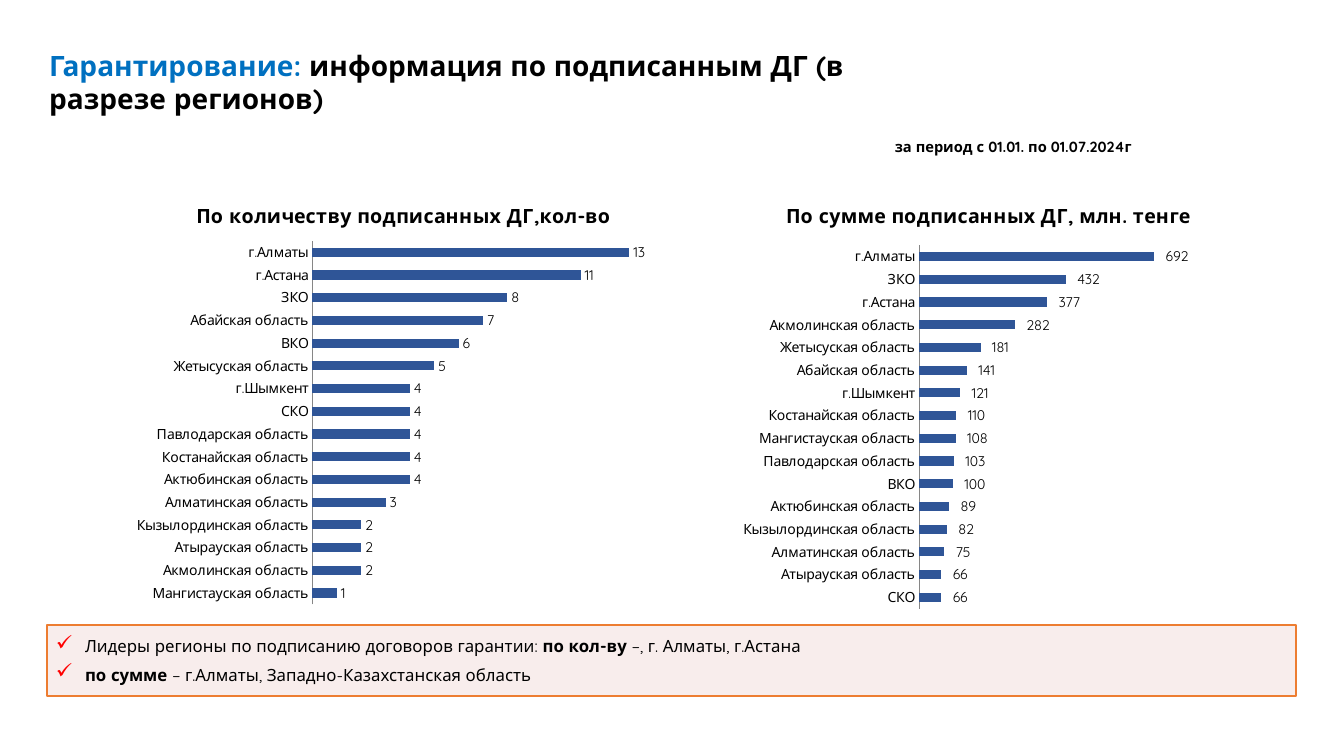
from lxml import etree
from pptx import Presentation
from pptx.chart.data import CategoryChartData
from pptx.dml.color import RGBColor
from pptx.enum.chart import XL_CHART_TYPE, XL_LABEL_POSITION, XL_TICK_MARK
from pptx.enum.shapes import MSO_SHAPE
from pptx.enum.text import MSO_ANCHOR, PP_ALIGN
from pptx.oxml import parse_xml
from pptx.oxml.ns import nsdecls, qn
from pptx.util import Emu, Pt

BAR = XL_CHART_TYPE.BAR_CLUSTERED
OUTSIDE = XL_LABEL_POSITION.OUTSIDE_END
NO_TICK = XL_TICK_MARK.NONE
RECTANGLE = MSO_SHAPE.RECTANGLE
TOP, MIDDLE = MSO_ANCHOR.TOP, MSO_ANCHOR.MIDDLE
LEFT = PP_ALIGN.LEFT

SCALE = 914400 / 100.8
COLORS = {"accent": "0070C0", "text": "000000", "bar": "2F5597", "axis": "868686",
          "note": "F2DCDB", "frame": "ED7D31", "check": "FF0000"}
MONEY = r'_-* #\ ##0_р_._-;\-* #\ ##0_р_._-;_-* "-"??_р_._-;_-@_-'

COUNTS = [("Мангистауская область", 1), ("Акмолинская область", 2),
          ("Атырауская область", 2), ("Кызылординская область", 2),
          ("Алматинская область", 3), ("Актюбинская область", 4),
          ("Костанайская область", 4), ("Павлодарская область", 4),
          ("СКО", 4), ("г.Шымкент", 4), ("Жетысуская область", 5), ("ВКО", 6),
          ("Абайская область", 7), ("ЗКО", 8), ("г.Астана", 11), ("г.Алматы", 13)]
SUMS = [("СКО", 66), ("Атырауская область", 66), ("Алматинская область", 75),
        ("Кызылординская область", 82), ("Актюбинская область", 89), ("ВКО", 100),
        ("Павлодарская область", 103), ("Мангистауская область", 108),
        ("Костанайская область", 110), ("г.Шымкент", 121), ("Абайская область", 141),
        ("Жетысуская область", 181), ("Акмолинская область", 282),
        ("г.Астана", 377), ("ЗКО", 432), ("г.Алматы", 692)]


def px(length):
    return Emu(round(length * SCALE))


def rgb(name):
    return RGBColor.from_string(COLORS[name])


def assign(target, **values):
    for name, value in values.items():
        setattr(target, name, value)


class Page:
    font_name = "Quicksand"

    def __init__(self, deck):
        self.slide = deck.slides.add_slide(deck.slide_layouts[5])

    def style(self, font, size, bold=False, color="text"):
        assign(font, name=self.font_name, size=Pt(size), bold=bold)
        font.color.rgb = rgb(color)

    def add_spans(self, para, size, spans):
        """Add runs given as (text, bold, color name)."""
        for text, bold, color in spans:
            span = para.add_run()
            span.text = text
            self.style(span.font, size, bold, color)

    def title(self, place, size, spans):
        box = self.slide.shapes.title
        assign(box, **dict(zip(("left", "top", "width", "height"), map(px, place))))
        assign(box.text_frame, word_wrap=True, vertical_anchor=TOP)
        para = box.text_frame.paragraphs[0]
        para.alignment = LEFT
        self.add_spans(para, size, spans)

    def label(self, place, size, spans):
        box = self.slide.shapes.add_textbox(*map(px, place))
        box.text_frame.word_wrap = False
        self.add_spans(box.text_frame.paragraphs[0], size, spans)

    def note(self, place, size, lines):
        box = self.slide.shapes.add_shape(RECTANGLE, *map(px, place))
        box.shadow.inherit = False
        box.fill.solid()
        box.fill.fore_color.rgb = rgb("note")
        fill_color = box.element.spPr.find(qn("a:solidFill"))[0]
        etree.SubElement(fill_color, qn("a:alpha"), val="50000")
        box.line.color.rgb = rgb("frame")
        box.line.width = Pt(1)
        frame = box.text_frame
        assign(frame, word_wrap=True, vertical_anchor=MIDDLE, margin_left=px(8),
               margin_right=px(8), margin_top=px(4), margin_bottom=px(4))
        for index, spans in enumerate(lines):
            para = frame.add_paragraph() if index else frame.paragraphs[0]
            self.check_mark(para)
            assign(para, alignment=LEFT, space_after=Pt(6))
            self.add_spans(para, size, spans)

    def check_mark(self, para):
        properties = para._p.get_or_add_pPr()
        properties.set("marL", str(px(30)))
        properties.set("indent", str(-px(29)))
        color = etree.SubElement(properties, qn("a:buClr"))
        etree.SubElement(color, qn("a:srgbClr"), val=COLORS["check"])
        etree.SubElement(properties, qn("a:buSzPct"), val="125000")
        etree.SubElement(properties, qn("a:buChar"), char="✓")

    def bars(self, place, title, rows, maximum, plot_area, number_format):
        data = CategoryChartData()
        data.categories = [region for region, _ in rows]
        data.add_series("Series 1", [value for _, value in rows])
        chart = self.slide.shapes.add_chart(BAR, *map(px, place), data).chart
        self.style(chart.font, 10)
        assign(chart, has_legend=False, has_title=True)
        self.add_spans(chart.chart_title.text_frame.paragraphs[0], 14,
                       [(title, True, "text")])
        assign(chart.value_axis, visible=False, has_major_gridlines=False,
               minimum_scale=0, maximum_scale=maximum)
        assign(chart.category_axis, major_tick_mark=NO_TICK, minor_tick_mark=NO_TICK)
        chart.category_axis.format.line.color.rgb = rgb("axis")
        plot = chart.plots[0]
        assign(plot, gap_width=150, vary_by_categories=False, has_data_labels=True)
        assign(plot.data_labels, show_value=True, position=OUTSIDE,
               number_format=number_format, number_format_is_linked=False)
        self.style(plot.data_labels.font, 10)
        fill = plot.series[0].format.fill
        fill.solid()
        fill.fore_color.rgb = rgb("bar")
        self.place_plot(chart, plot_area)

    def place_plot(self, chart, plot_area):
        """Fix the inner plot area, given as shares of the chart."""
        area = chart.element.chart.plotArea if hasattr(chart, "element") else chart._chartSpace.chart.plotArea
        for layout in area.findall(qn("c:layout")):
            area.remove(layout)
        sizes = "".join(f'<c:{key} val="{share}"/>' for key, share in zip("xywh", plot_area))
        area.insert(0, parse_xml(
            f'<c:layout {nsdecls("c")}><c:manualLayout><c:layoutTarget val="inner"/>'
            f'<c:xMode val="edge"/><c:yMode val="edge"/>{sizes}</c:manualLayout></c:layout>'))


def main():
    deck = Presentation()
    assign(deck, slide_width=px(1344), slide_height=px(756))
    page = Page(deck)
    page.title((39, 43, 921, 78), 20, [
        ("Гарантирование: ", True, "accent"),
        ("информация по подписанным ДГ (в разрезе регионов)", True, "text")])
    page.label((885, 133, 265, 28), 10.5, [
        ("за период с 01.01. по 01.07.2024г", True, "text")])
    page.note((47, 625, 1249, 71), 12, [
        [("Лидеры регионы по подписанию договоров гарантии: ", False, "text"),
         ("по кол-ву", True, "text"),
         (" –, г. Алматы, г.Астана", False, "text")],
        [("по сумме ", True, "text"),
         ("– г.Алматы, Западно-Казахстанская область", False, "text")]])
    page.bars((119, 184, 569, 438), "По количеству подписанных ДГ,кол-во",
              COUNTS, 14, (0.34, 0.13, 0.6, 0.83), "General")
    page.bars((699, 184, 579, 438), "По сумме подписанных ДГ, млн. тенге",
              SUMS, 800, (0.38, 0.14, 0.47, 0.83), MONEY)
    deck.save("out.pptx")


if __name__ == "__main__":
    main()
